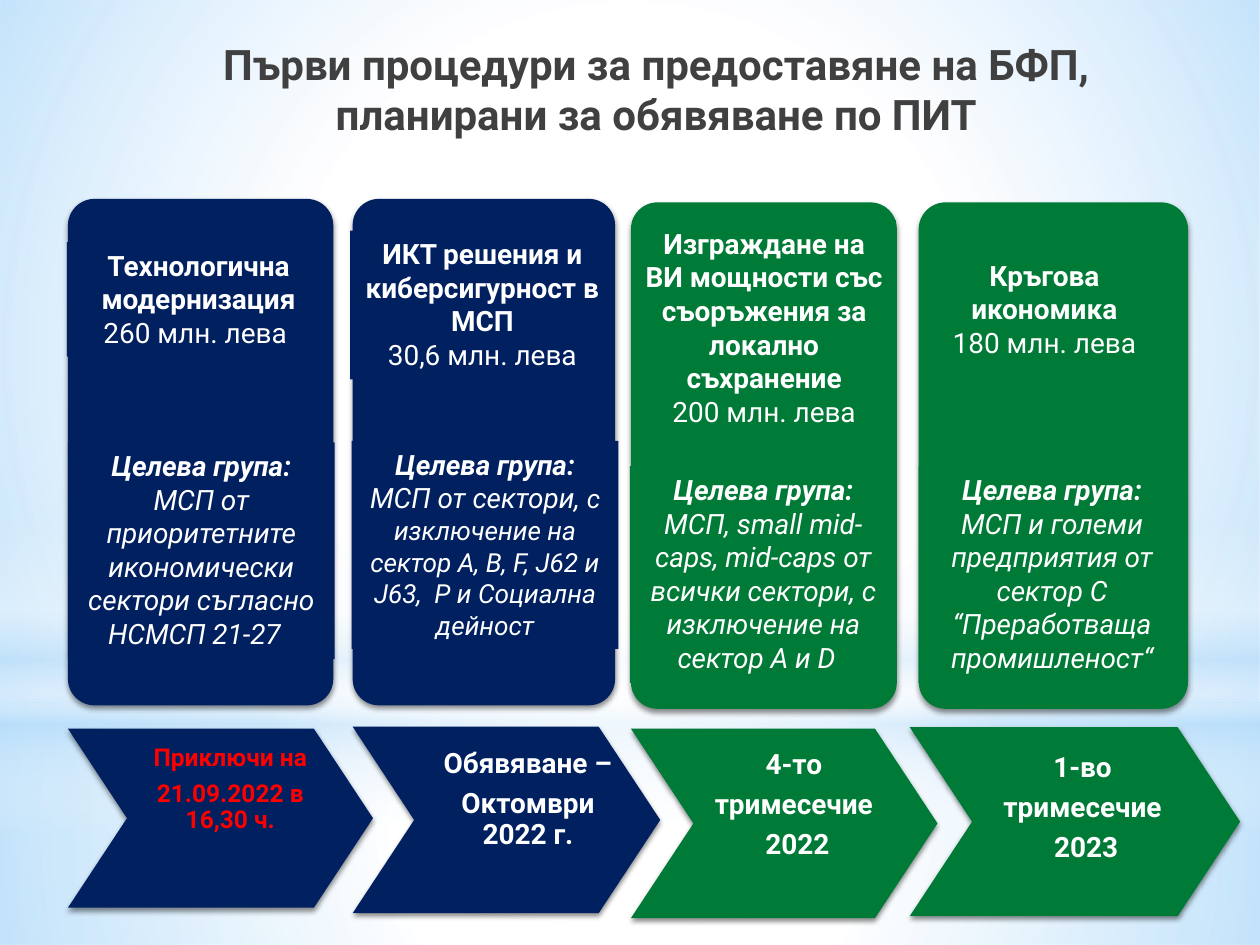
from lxml import etree
from pptx import Presentation
from pptx.dml.color import RGBColor
from pptx.enum.shapes import MSO_SHAPE
from pptx.enum.text import MSO_ANCHOR, PP_ALIGN
from pptx.oxml import parse_xml
from pptx.oxml.ns import nsdecls
from pptx.util import Cm, Pt

RECT, OVAL = MSO_SHAPE.RECTANGLE, MSO_SHAPE.OVAL
CARD, ARROW = MSO_SHAPE.ROUNDED_RECTANGLE, MSO_SHAPE.CHEVRON
TOP, MID = MSO_ANCHOR.TOP, PP_ALIGN.CENTER
HUES = {"white": "FFFFFF", "sky": "B4DCFA", "navy": "002060",
        "green": "007A37", "red": "FF0000", "grey": "404040"}


def rgb(name):
    return RGBColor.from_string(HUES[name])


def write(frame, paras, size=16, hue="white", bold=False, italic=False,
          line=None, after=0):
    """Fill a frame; each paragraph is a list of (text, format changes)."""
    frame.word_wrap = True
    frame.vertical_anchor = TOP
    for i, runs in enumerate(paras):
        para = frame.paragraphs[0] if i == 0 else frame.add_paragraph()
        para.alignment = MID
        para.line_spacing = line
        para.space_after = Pt(after)
        for text, own in runs:
            run = para.add_run()
            run.text = text
            font = run.font
            font.name = "Roboto"
            font.size = Pt(own.get("size", size))
            font.bold = own.get("bold", bold)
            font.italic = italic
            font.color.rgb = rgb(hue)


deck = Presentation()
deck.slide_width, deck.slide_height = Cm(25.4), Cm(19.05)
slide = deck.slides.add_slide(deck.slide_layouts[5])
shapes = slide.shapes

# Backdrop: kind, top, height, stops (place, hue, opacity), direction
ROUND = ('<a:path path="circle"><a:fillToRect l="50000" t="50000" '
         'r="50000" b="50000"/></a:path>')
DOWN = '<a:lin ang="5400000" scaled="0"/>'
glows = [
    (RECT, 14.17, 4.88,
     [(0, "white", 91), (37, "white", 76), (100, "sky", 79)], ROUND),
    (RECT, 0, 14.17,
     [(0, "white", 89), (48, "white", 62), (100, "sky", 79)], ROUND),
    (RECT, 10.46, 6.35,
     [(0, "white", 0), (29, "white", 30), (45, "sky", 40),
      (55, "white", 26), (65, "sky", 60), (100, "white", 0)], DOWN),
    (OVAL, 4.45, 14.17, [(0, "white", 100), (56, "white", 0)], ROUND),
]
for kind, top, high, stops, way in glows:
    glow = shapes.add_shape(kind, 0, Cm(top), deck.slide_width, Cm(high))
    glow.shadow.inherit = False
    glow.line.fill.background()
    marks = "".join(
        f'<a:gs pos="{at * 1000}"><a:srgbClr val="{HUES[hue]}">'
        f'<a:alpha val="{seen * 1000}"/></a:srgbClr></a:gs>'
        for at, hue, seen in stops)
    grad = parse_xml(f'<a:gradFill {nsdecls("a")} rotWithShape="1">'
                     f'<a:gsLst>{marks}</a:gsLst>{way}</a:gradFill>')
    glow.element.spPr.find(".//{*}prstGeom").addnext(grad)

title = shapes.title
title.left, title.top = Cm(2.97), Cm(0.64)
title.width, title.height = Cm(20.52), Cm(1.78)
write(title.text_frame,
      [[("Първи процедури за предоставяне на БФП, "
         "планирани за обявяване по ПИТ", {})]],
      size=24, hue="grey", bold=True)
title.element.getparent().append(title.element)

# Boxes are (left, top, width, height) in centimetres
plain = {"bold": False}
steps = [
    {"hue": "navy", "card": (1.37, 4.01, 5.35, 10.21),
     "arrow": (1.37, 14.69, 6.15, 3.61),
     "name": ("Технологична модернизация", "260 млн. лева "),
     "head": (1.35, 4.88, 5.31, 2.31),
     "group": [("МСП от приоритетните икономически сектори съгласно "
                "НСМСП 21-27  ", plain)],
     "body": (1.37, 8.92, 5.38, 4.37),
     "when": ["Приключи на", "21.09.2022 в 16,30 ч."],
     "date": (2.64, 14.91, 4.01, 3.05), "ink": "red", "size": 14},
    {"hue": "navy", "card": (7.11, 4.01, 5.29, 10.21),
     "arrow": (7.11, 14.65, 6.2, 3.76),
     "name": ("ИКТ решения и киберсигурност в МСП", "30,6 млн. лева"),
     "head": (7.06, 4.65, 5.33, 3),
     "group": [("МСП от сектори, ", plain),
               ("с изключение на сектор А, В, F, J62 и J63,  P и Социална "
                "дейност", {"bold": False, "size": 15})],
     "body": (7.09, 8.89, 5.38, 4.19),
     "when": ["Обявяване –", "Октомври 2022 г."],
     "date": (8.64, 14.99, 4.01, 3.35)},
    {"hue": "green", "card": (12.72, 4.08, 5.36, 10.21),
     "arrow": (12.72, 14.69, 6.18, 3.82),
     "name": ("Изграждане на ВИ мощности със съоръжения за локално "
              "съхранение", "200 млн. лева"),
     "head": (12.75, 4.44, 5.31, 4.37),
     "group": [("МСП, small mid-caps, mid-caps от всички сектори, "
                "с изключение на сектор А и D  ", plain)],
     "body": (12.7, 9.4, 5.38, 4.37),
     "when": ["4-то ", "тримесечие ", "2022"],
     "date": (14.07, 15.01, 4.01, 3.71)},
    {"hue": "green", "card": (18.52, 4.08, 5.43, 10.21),
     "arrow": (18.34, 14.66, 6.66, 3.81),
     "name": ("Кръгова икономика", "180 млн. лева"),
     "head": (18.16, 5.08, 5.79, 2.31), "clear": True,
     "group": [("МСП и големи предприятия от сектор C "
                "“Преработваща промишленост“", plain)],
     "body": (18.52, 9.4, 5.38, 4.37),
     "when": ["1-во ", "тримесечие ", "2023"],
     "date": (19.89, 15.06, 4.01, 3.71)},
]
SHADE = (f'<a:effectLst {nsdecls("a")}><a:outerShdw blurRad="39370" '
         'dist="22860" dir="5400000" rotWithShape="0">'
         '<a:srgbClr val="000000"><a:alpha val="45000"/></a:srgbClr>'
         '</a:outerShdw></a:effectLst>')

for kind, part, bend in ((ARROW, "arrow", 0.33), (CARD, "card", 0.1)):
    for step in steps:
        shape = shapes.add_shape(kind, *map(Cm, step[part]))
        shape.adjustments[0] = bend
        shape.fill.solid()
        shape.fill.fore_color.rgb = rgb(step["hue"])
        shape.line.fill.background()
        shape.element.spPr.append(etree.fromstring(SHADE))

for step in steps:
    name, sum_ = step["name"]
    head = shapes.add_textbox(*map(Cm, step["head"]))
    write(head.text_frame, [[(name, {})], [(sum_, plain)]], bold=True)
    body = shapes.add_textbox(*map(Cm, step["body"]))
    write(body.text_frame, [[("Целева група:", {})], step["group"]],
          bold=True, italic=True)
    for box in (body,) if step.get("clear") else (head, body):
        box.fill.solid()
        box.fill.fore_color.rgb = rgb(step["hue"])
    size = step.get("size", 16)
    date = shapes.add_textbox(*map(Cm, step["date"]))
    write(date.text_frame, [[(text, {})] for text in step["when"]],
          size=size, hue=step.get("ink", "white"), bold=True,
          line=0.9, after=round(size * 0.35, 1))

deck.save("out.pptx")
